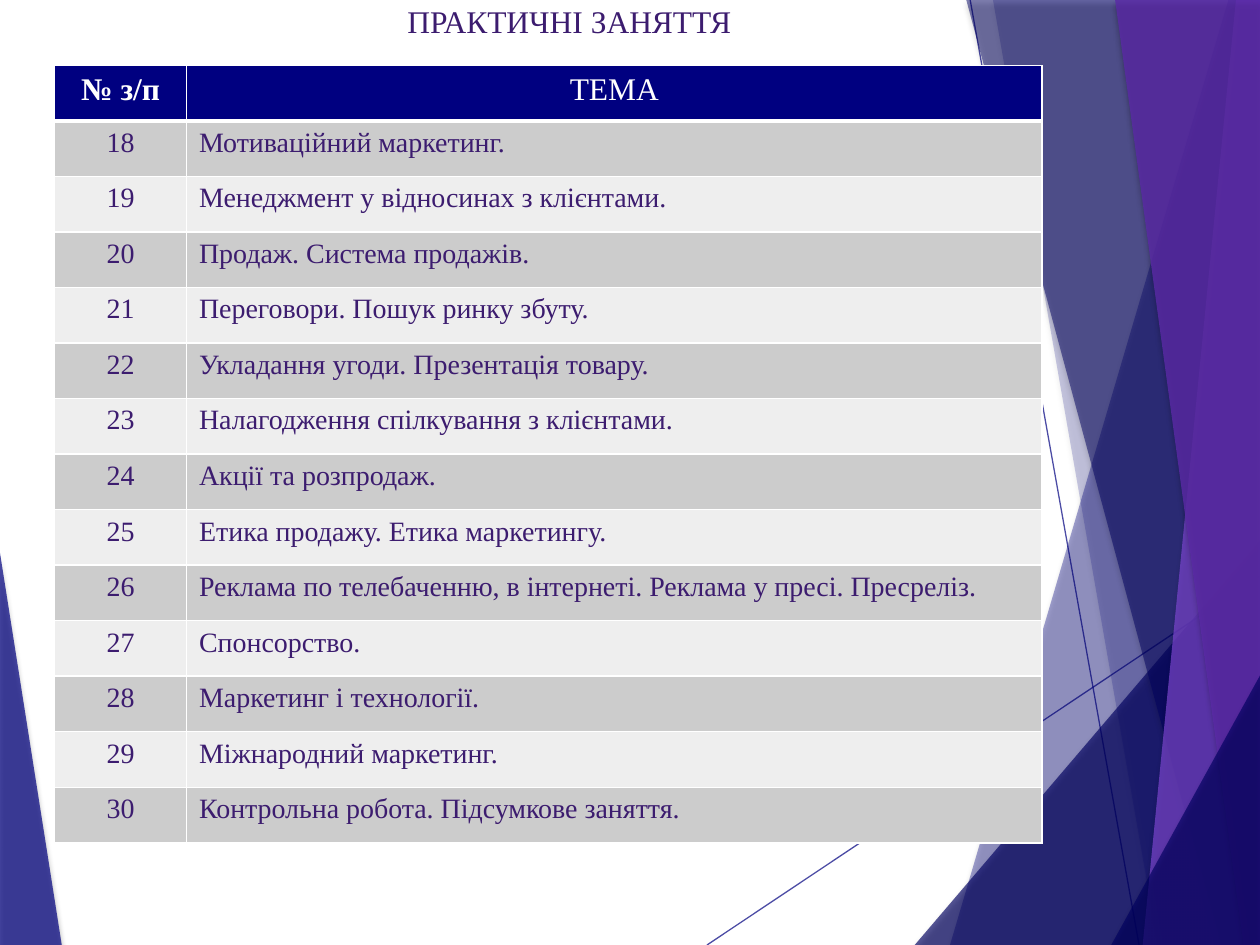
from dataclasses import dataclass

from lxml.etree import SubElement
from pptx import Presentation
from pptx.dml.color import RGBColor
from pptx.enum.shapes import MSO_CONNECTOR
from pptx.enum.text import MSO_ANCHOR, MSO_AUTO_SIZE, PP_ALIGN
from pptx.oxml.ns import qn
from pptx.util import Pt

FONT = "Times New Roman"
NAVY, DARK_NAVY, INK, WHITE = "000080", "000060", "3C1C6F", "FFFFFF"
BAND_FILLS = ("CCCCCC", "EEEEEE")
RIGHT, BOTTOM = 720, 540
FIRST_NUMBER = 18
TOPICS = (
    "Мотиваційний маркетинг.",
    "Менеджмент у відносинах з клієнтами.",
    "Продаж. Система продажів.",
    "Переговори. Пошук ринку збуту.",
    "Укладання угоди. Презентація товару.",
    "Налагодження спілкування з клієнтами.",
    "Акції та розпродаж.",
    "Етика продажу. Етика маркетингу.",
    "Реклама по телебаченню, в інтернеті. Реклама у пресі. Пресреліз.",
    "Спонсорство.",
    "Маркетинг і технології.",
    "Міжнародний маркетинг.",
    "Контрольна робота. Підсумкове заняття.",
)


@dataclass
class Facet:
    points: tuple
    color: str
    opacity: int


@dataclass
class Ray:
    start: tuple
    end: tuple


def right_facet(top: tuple, foot: float, color: str, opacity: int) -> Facet:
    """Facet between a slanted left edge and the right side of the slide."""
    points = (top, (foot, BOTTOM), (RIGHT, BOTTOM), (RIGHT, top[1]))
    return Facet(points, color, opacity)


LEFT_FACET = Facet(((0, 316), (35.3, BOTTOM), (0, BOTTOM)), NAVY, 70)
RAYS = (
    Ray((404, BOTTOM), (RIGHT, 329)),
    Ray((554.4, 0), (650.9, BOTTOM)),
)
RIGHT_FACETS = (
    right_facet((702, 0), 542.9, NAVY, 36),
    right_facet((567.4, 0), 661.7, NAVY, 20),
    right_facet((RIGHT, 308.9), 522.7, DARK_NAVY, 66),
    right_facet((552.2, 0), 697.7, DARK_NAVY, 50),
    right_facet((706.3, 0), 653, "7B46D0", 70),
    right_facet((637.2, 0), 710.6, "5A2AA6", 82),
    right_facet((RIGHT, 386), 635, DARK_NAVY, 66),
)


def rgb(color: str) -> RGBColor:
    return RGBColor.from_string(color)


def set_opacity(fill_element, percent: int) -> None:
    color_element = fill_element.find(".//" + qn("a:srgbClr"))
    SubElement(color_element, qn("a:alpha"), val=str(percent * 1000))


def add_shadow(properties) -> None:
    effects = SubElement(properties, qn("a:effectLst"))
    shadow = SubElement(effects, qn("a:outerShdw"), blurRad=str(Pt(3)),
                        dist=str(Pt(2)), dir="5400000", rotWithShape="0")
    color_element = SubElement(shadow, qn("a:srgbClr"), val="000000")
    SubElement(color_element, qn("a:alpha"), val="35000")


def add_facet(slide, facet: Facet) -> None:
    first, *rest = [(Pt(x), Pt(y)) for x, y in facet.points]
    builder = slide.shapes.build_freeform(*first)
    builder.add_line_segments(rest, close=True)
    shape = builder.convert_to_shape()
    shape.fill.solid()
    shape.fill.fore_color.rgb = rgb(facet.color)
    shape.line.fill.background()
    properties = shape._element.spPr
    set_opacity(properties.find(qn("a:solidFill")), facet.opacity)
    add_shadow(properties)


def add_ray(slide, ray: Ray) -> None:
    ends = [Pt(value) for value in ray.start + ray.end]
    connector = slide.shapes.add_connector(MSO_CONNECTOR.STRAIGHT, *ends)
    connector.line.color.rgb = rgb(NAVY)
    connector.line.width = Pt(0.75)
    properties = connector._element.spPr
    set_opacity(properties.find(qn("a:ln")), 70)
    SubElement(properties, qn("a:effectLst"))


def write(text_frame, text: str, size: float, color: str,
          bold: bool = False, centered: bool = True) -> None:
    paragraph = text_frame.paragraphs[0]
    paragraph.alignment = PP_ALIGN.CENTER if centered else PP_ALIGN.LEFT
    run = paragraph.add_run()
    run.text = text
    run.font.name = FONT
    run.font.size = Pt(size)
    run.font.bold = bold
    run.font.color.rgb = rgb(color)


def format_cell(cell, fill: str, top: float, bottom: float) -> None:
    """Fill the cell and give it white borders of the given widths."""
    properties = cell._tc.get_or_add_tcPr()
    widths = {"a:lnL": 0.96, "a:lnR": 0.96, "a:lnT": top, "a:lnB": bottom}
    for tag, width in widths.items():
        border = SubElement(properties, qn(tag), w=str(Pt(width)))
        border_fill = SubElement(border, qn("a:solidFill"))
        SubElement(border_fill, qn("a:srgbClr"), val=WHITE)
    cell.fill.solid()
    cell.fill.fore_color.rgb = rgb(fill)


def add_topic_table(slide) -> None:
    row_count = len(TOPICS) + 1
    widths = (Pt(75.4), Pt(489))
    table = slide.shapes.add_table(row_count, 2, Pt(31.2), Pt(37.5),
                                   sum(widths), Pt(444.4)).table
    for column, width in zip(table.columns, widths):
        column.width = width

    for cell, text, bold in zip(table.rows[0].cells, ("№ з/п", "ТЕМА"), (True, False)):
        format_cell(cell, NAVY, 0.96, 3)
        write(cell.text_frame, text, 18, WHITE, bold)

    for index, topic in enumerate(TOPICS):
        number_cell, topic_cell = table.rows[index + 1].cells
        for cell in (number_cell, topic_cell):
            format_cell(cell, BAND_FILLS[index % 2], 0.96 if index else 3, 0.96)
        write(number_cell.text_frame, str(FIRST_NUMBER + index), 16, INK)
        write(topic_cell.text_frame, topic, 16, INK, centered=False)


def format_title(title) -> None:
    title.left, title.top = Pt(144.7), Pt(-2.2)
    title.width, title.height = Pt(361.4), Pt(29)
    text_frame = title.text_frame
    text_frame.auto_size = MSO_AUTO_SIZE.NONE
    text_frame.vertical_anchor = MSO_ANCHOR.TOP
    write(text_frame, "ПРАКТИЧНІ ЗАНЯТТЯ", 18, INK)


def main() -> None:
    presentation = Presentation()
    presentation.slide_width, presentation.slide_height = Pt(RIGHT), Pt(BOTTOM)
    slide = presentation.slides.add_slide(presentation.slide_layouts[5])
    format_title(slide.shapes.title)
    add_facet(slide, LEFT_FACET)
    for ray in RAYS:
        add_ray(slide, ray)
    for facet in RIGHT_FACETS:
        add_facet(slide, facet)
    add_topic_table(slide)
    presentation.save("out.pptx")


if __name__ == "__main__":
    main()
